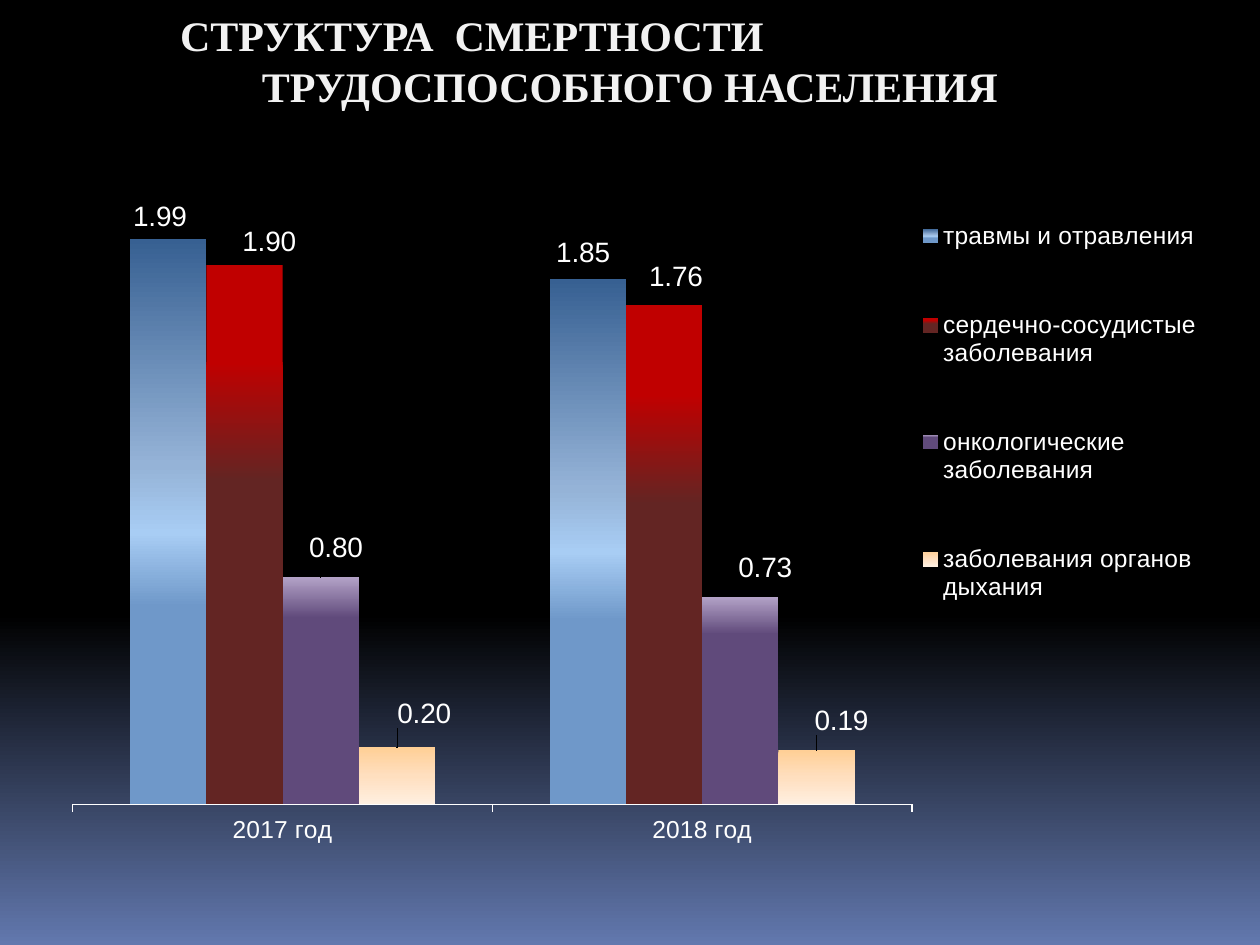
from copy import deepcopy

from lxml import etree
from pptx import Presentation
from pptx import util as u
from pptx.chart.data import CategoryChartData
from pptx.dml.color import RGBColor
from pptx.enum import chart as charts, text
from pptx.oxml.ns import qn

WHITE = RGBColor(0xFF, 0xFF, 0xFF)
TITLE_COLOR = RGBColor(0xF2, 0xF2, 0xF2)
BLACK = RGBColor(0, 0, 0)
NIGHT_BLUE = RGBColor(0x62, 0x78, 0xAE)
CRIMSON = RGBColor(0xC0, 0, 0)
MAROON = RGBColor(0x63, 0x25, 0x23)
PURPLE = RGBColor(0x60, 0x4A, 0x7B)

BACKGROUND = [(0, BLACK), (0.65, BLACK), (1, NIGHT_BLUE)]
YEARS = ["2017 год", "2018 год"]

# Name, values, gradient stops, label shifts in percent of the chart size
CAUSES = [
    ("травмы и отравления", (1.99, 1.85),
     [(0, RGBColor(0x37, 0x60, 0x92)), (0.4, RGBColor(0x95, 0xB3, 0xD7)),
      (0.52, RGBColor(0xA8, 0xCD, 0xF4)), (0.65, RGBColor(0x6F, 0x98, 0xC9))],
     [(-0.7, -0.4), (-0.4, -0.9)]),
    ("сердечно-сосудистые заболевания", (1.90, 1.76),
     [(0, CRIMSON), (0.18, CRIMSON), (0.4, MAROON), (0.52, MAROON)],
     [(2.1, -0.5), (1, -1.1)]),
    ("онкологические заболевания", (0.80, 0.73),
     [(0, RGBColor(0xB3, 0xA2, 0xC7)), (0.18, PURPLE), (0.52, PURPLE)],
     [(1.3, -1.3), (2.1, -1.3)]),
    ("заболевания органов дыхания", (0.20, 0.19),
     [(0, RGBColor(0xFF, 0xCF, 0x96)), (0.5, RGBColor(0xFF, 0xDF, 0xBF)),
      (1, RGBColor(0xFF, 0xEF, 0xE0))],
     [(2.3, -1.9), (2.1, -1.3)]),
]


def set_gradient(fill, owner, stops):
    """Fill from top to bottom with (position, color) stops."""
    fill.gradient()
    fill.gradient_angle = 270
    stop_list = owner.find(".//" + qn("a:gsLst"))
    while len(stop_list) < len(stops):
        stop_list.append(deepcopy(stop_list[0]))
    for stop, (position, color) in zip(fill.gradient_stops, stops):
        stop.position = position
        stop.color.rgb = color


def set_layout(parent, index, **values):
    """Place a chart part by hand, replacing any automatic layout."""
    for old in parent.findall(qn("c:layout")):
        parent.remove(old)
    layout = etree.Element(qn("c:layout"))
    manual = etree.SubElement(layout, qn("c:manualLayout"))
    for name, value in values.items():
        etree.SubElement(manual, qn("c:" + name)).set("val", str(value))
    parent.insert(index, layout)


class SlideBuilder:
    title_font = "Times New Roman"
    chart_font = "Arial"

    def __init__(self, slide):
        self.slide = slide

    def background(self, stops):
        fill = self.slide.background.fill
        set_gradient(fill, self.slide.element, stops)

    def style(self, font, name, size, color, bold=False):
        font.name, font.size, font.bold = name, u.Pt(size), bold
        font.color.rgb = color

    def title(self, first_line, second_line):
        box = self.slide.shapes.add_textbox(0, 0, u.Cm(25.4), u.Cm(2.77))
        frame = box.text_frame
        frame.word_wrap = True
        frame.margin_top = u.Cm(0.2)
        frame.vertical_anchor = text.MSO_ANCHOR.TOP
        frame.text = f"{first_line}\n{second_line}"
        first, second = frame.paragraphs
        first.alignment = text.PP_ALIGN.LEFT
        first._p.get_or_add_pPr().set("marL", str(u.Cm(3.38)))
        second.alignment = text.PP_ALIGN.CENTER
        for paragraph in frame.paragraphs:
            for run in paragraph.runs:
                self.style(run.font, self.title_font, 24, TITLE_COLOR, True)

    def column_chart(self, categories, causes):
        data = CategoryChartData(number_format="0.00")
        data.categories = categories
        for name, values, _, _ in causes:
            data.add_series(name, values)
        chart = self.slide.shapes.add_chart(
            charts.XL_CHART_TYPE.COLUMN_CLUSTERED,
            u.Cm(0.99), u.Cm(2.18), u.Cm(23.83), u.Cm(15.09), data).chart
        chart.has_title = False
        self.style(chart.font, "Calibri", 18, WHITE)
        self.axes(chart)
        self.legend(chart)
        plot = chart.plots[0]
        plot.gap_width, plot.overlap = 150, 0
        plot.vary_by_categories = False
        set_layout(chart._chartSpace.find(".//" + qn("c:plotArea")), 0,
                   layoutTarget="inner", xMode="edge", yMode="edge",
                   x=0.02, y=0.02, w=0.71, h=0.91)
        for series, (_, _, stops, shifts) in zip(plot.series, causes):
            set_gradient(series.format.fill, series._element, stops)
            self.value_labels(series, shifts)

    def axes(self, chart):
        category_axis, value_axis = chart.category_axis, chart.value_axis
        category_axis.major_tick_mark = charts.XL_TICK_MARK.OUTSIDE
        category_axis.format.line.color.rgb = WHITE
        self.style(category_axis.tick_labels.font, self.chart_font, 14, WHITE)
        value_axis.minimum_scale, value_axis.maximum_scale = 0, 2.4
        value_axis.major_unit = 0.5
        value_axis.has_major_gridlines = False
        value_axis.major_tick_mark = charts.XL_TICK_MARK.OUTSIDE
        value_axis.tick_label_position = charts.XL_TICK_LABEL_POSITION.NONE
        value_axis.format.line.fill.background()

    def legend(self, chart):
        chart.has_legend = True
        legend = chart.legend
        legend.position = charts.XL_LEGEND_POSITION.RIGHT
        legend.include_in_layout = False
        self.style(legend.font, self.chart_font, 14, WHITE)
        set_layout(legend._element, 1, xMode="edge", yMode="edge",
                   x=0.73, y=0.07, w=0.25, h=0.67)

    def value_labels(self, series, shifts):
        labels = series.data_labels
        labels.show_value = True
        labels.number_format = "0.00"
        labels.number_format_is_linked = False
        labels.position = charts.XL_LABEL_POSITION.OUTSIDE_END
        self.style(labels.font, self.chart_font, 16, WHITE)
        for index, (right, down) in enumerate(shifts):
            label = series.points[index].data_label
            label.position = charts.XL_LABEL_POSITION.OUTSIDE_END
            self.style(label.font, self.chart_font, 16, WHITE)
            element = series._element.findall(".//" + qn("c:dLbl"))[index]
            set_layout(element, 1, x=right / 100, y=down / 100)


def main():
    presentation = Presentation()
    presentation.slide_width = u.Cm(25.4)
    presentation.slide_height = u.Cm(19.05)
    slide = presentation.slides.add_slide(presentation.slide_layouts[6])
    builder = SlideBuilder(slide)
    builder.background(BACKGROUND)
    builder.title("СТРУКТУРА  СМЕРТНОСТИ", "ТРУДОСПОСОБНОГО НАСЕЛЕНИЯ")
    builder.column_chart(YEARS, CAUSES)
    presentation.save("out.pptx")


if __name__ == "__main__":
    main()
